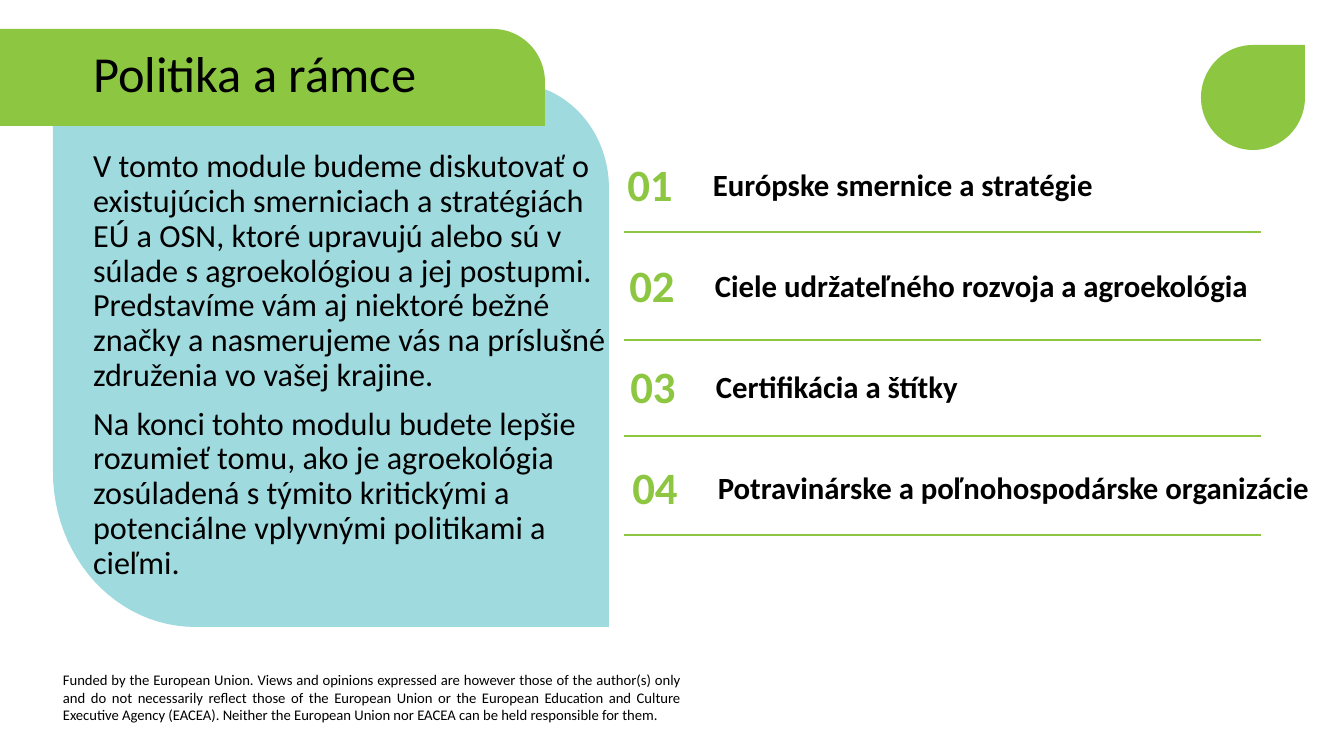
from math import cos, radians, sin

from lxml.etree import SubElement
from pptx import Presentation
from pptx.dml.color import RGBColor
from pptx.enum.shapes import MSO_CONNECTOR, MSO_SHAPE
from pptx.enum.text import MSO_ANCHOR, MSO_AUTO_SIZE, PP_ALIGN
from pptx.oxml.ns import qn
from pptx.util import Pt

PX = 914400 / 100.8
GREEN, TEAL, BLACK = "8DC641", "9FDADF", "000000"


def px(n):
    return round(n * PX)


def rgb(value):
    return RGBColor.from_string(value)


def arc(cx, cy, rx, ry, start, steps=24):
    angles = [radians(start + 90 * i / steps) for i in range(steps + 1)]
    return [(cx + rx * cos(a), cy + ry * sin(a)) for a in angles]


class Deck:
    """Draws styled elements on the current slide, with lengths in px."""

    font = "Calibri"

    def __init__(self, width, height):
        self.prs = Presentation()
        self.prs.slide_width, self.prs.slide_height = px(width), px(height)

    def add_slide(self, layout):
        self.s = self.prs.slides.add_slide(self.prs.slide_layouts[layout])

    def paint(self, sp, color):
        sp.shadow.inherit = False
        sp.fill.solid()
        sp.fill.fore_color.rgb = rgb(color)
        sp.line.fill.background()

    def outline(self, points, color):
        points = [(px(x), px(y)) for x, y in points]
        builder = self.s.shapes.build_freeform(*points[0], scale=1.0)
        builder.add_line_segments(points[1:], close=True)
        self.paint(builder.convert_to_shape(), color)

    def shape(self, kind, box, color):
        self.paint(self.s.shapes.add_shape(kind, *map(px, box)), color)

    def rule(self, x1, x2, y, color):
        sp = self.s.shapes.add_connector(
            MSO_CONNECTOR.STRAIGHT, px(x1), px(y), px(x2), px(y))
        sp.line.color.rgb = rgb(color)
        sp.line.width = Pt(1)
        SubElement(sp.element.spPr, qn("a:effectLst"))

    def fill_text(self, sp, paragraphs, size, color=BLACK, bold=False,
                  anchor=MSO_ANCHOR.MIDDLE, **layout):
        tf = sp.text_frame
        frame = {"word_wrap": True, "auto_size": MSO_AUTO_SIZE.NONE,
                 "vertical_anchor": anchor}
        for name, value in frame.items():
            setattr(tf, name, value)
        for i, text in enumerate(paragraphs):
            p = tf.add_paragraph() if i else tf.paragraphs[0]
            pPr = p._p.get_or_add_pPr()
            pPr.set("marL", "0")
            pPr.set("indent", "0")
            SubElement(pPr, qn("a:buNone"))
            spacing = {"alignment": PP_ALIGN.LEFT, "line_spacing": 0.9,
                       "space_before": Pt(10 if i else 0)}
            for name, value in (spacing | layout).items():
                setattr(p, name, value)
            r = p.add_run()
            r.text = text
            style = {"name": self.font, "size": Pt(size), "bold": bold}
            for name, value in style.items():
                setattr(r.font, name, value)
            r.font.color.rgb = rgb(color)

    def text(self, box, text, size, **style):
        sp = self.s.shapes.add_textbox(*map(px, box))
        self.fill_text(sp, [text], size, **style)

    def placeholder(self, idx, box, paragraphs, size, **style):
        sp = self.s.placeholders[idx]
        for name, value in zip(("left", "top", "width", "height"), box):
            setattr(sp, name, px(value))
        sp.element.getparent().append(sp.element)
        self.fill_text(sp, paragraphs, size, **style)


def main():
    deck = Deck(1344, 756)
    deck.add_slide(1)

    deck.outline([(53, 83), *arc(512, 188, 97, 105, -90),
                  (609, 627), *arc(195, 472, 142, 155, 90)], TEAL)
    deck.outline([(0, 29), *arc(493, 82, 52, 53, -90),
                  (545, 126), (0, 126)], GREEN)
    deck.shape(MSO_SHAPE.TEAR, (1201, 45, 104, 105), GREEN)

    deck.placeholder(0, (83, 36, 555, 80), ["Politika a rámce"], 36)
    deck.placeholder(1, (83, 145, 539, 440), [
        "V tomto module budeme diskutovať o existujúcich smerniciach a "
        "stratégiách EÚ a OSN, ktoré upravujú alebo sú v súlade s "
        "agroekológiou a jej postupmi. Predstavíme vám aj niektoré bežné "
        "značky a nasmerujeme vás na príslušné združenia vo vašej krajine.",
        "Na konci tohto modulu budete lepšie rozumieť tomu, ako je "
        "agroekológia zosúladená s týmito kritickými a potenciálne "
        "vplyvnými politikami a cieľmi.",
    ], 23, anchor=MSO_ANCHOR.TOP)

    topics = [
        ("Európske smernice a stratégie", 232),
        ("Ciele udržateľného rozvoja a agroekológia", 340),
        ("Certifikácia a štítky", 436),
        ("Potravinárske a poľnohospodárske organizácie", 535),
    ]
    for i, (topic, rule_y) in enumerate(topics):
        x, y = 611 + round(5 * i / 3), 149 + 101 * i
        deck.rule(624, 1261, rule_y, GREEN)
        deck.text((x, y, 78, 76), f"{i + 1:02}", 32, color=GREEN, bold=True,
                  alignment=PP_ALIGN.CENTER)
        deck.text((x + 92, y, 636, 76), topic, 22, bold=True)

    deck.text((53, 666, 638, 66),
              "Funded by the European Union. Views and opinions expressed are "
              "however those of the author(s) only and do not necessarily "
              "reflect those of the European Union or the European Education "
              "and Culture Executive Agency (EACEA). Neither the European "
              "Union nor EACEA can be held responsible for them.",
              10.5, anchor=MSO_ANCHOR.TOP, alignment=PP_ALIGN.JUSTIFY,
              line_spacing=1.0)

    deck.prs.save("out.pptx")


if __name__ == "__main__":
    main()
